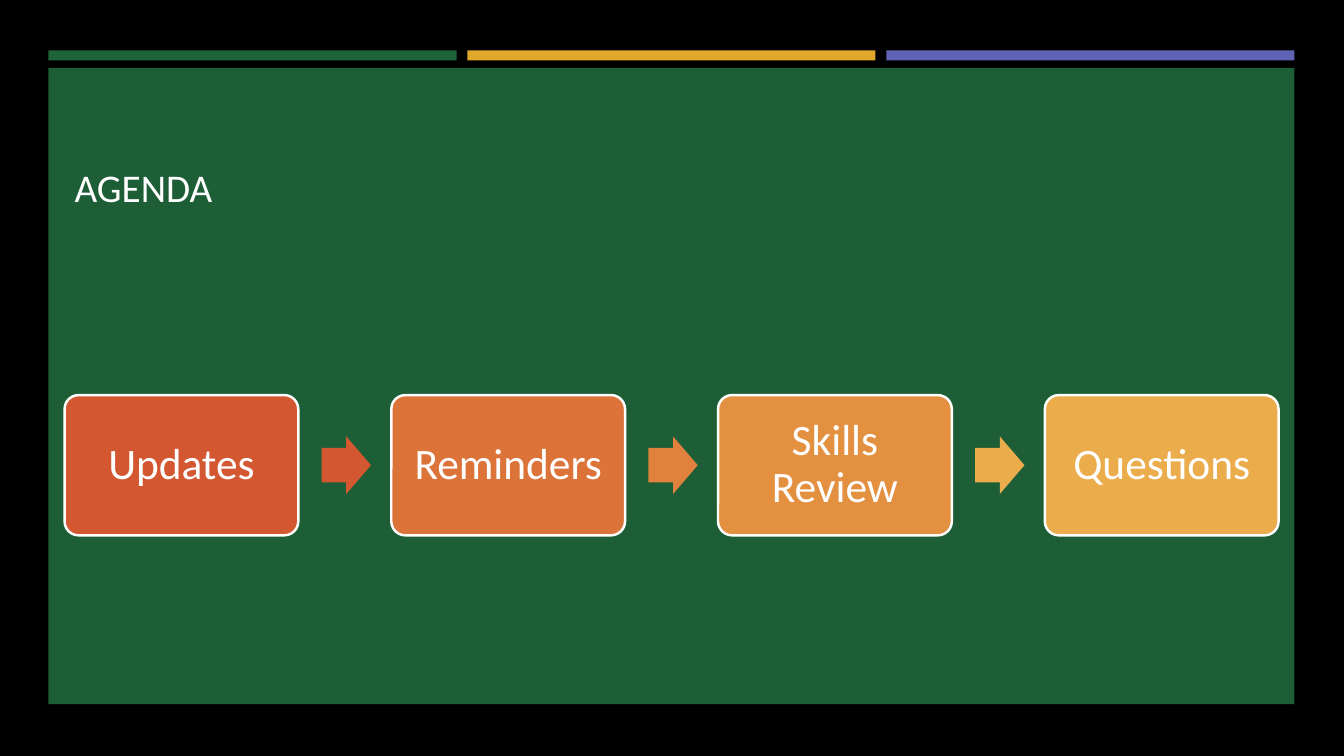
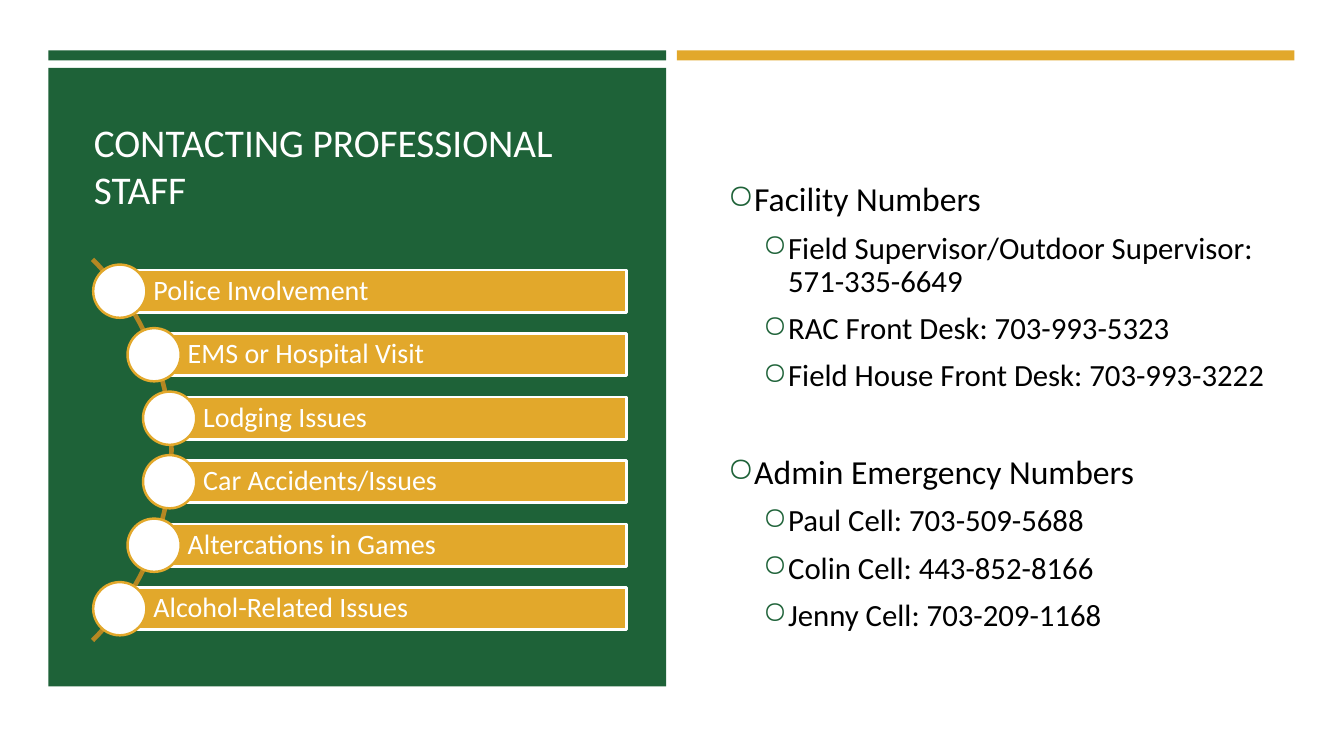
from dataclasses import dataclass
from math import cos, pi, sin, sqrt

from lxml.etree import SubElement
from pptx import Presentation
from pptx.dml.color import RGBColor as Rgb
from pptx.enum.shapes import MSO_SHAPE as Preset
from pptx.enum.text import MSO_ANCHOR as Anchor, MSO_AUTO_SIZE as AutoSize, PP_ALIGN as Align
from pptx.oxml.ns import qn
from pptx.util import Pt


@dataclass(frozen=True)
class Theme:
    font: str = "Calibri"
    black: str = "000000"
    white: str = "FFFFFF"
    green: str = "1E6238"
    gold: str = "E2A82B"
    violet: str = "6063B4"
    arc: str = "B58722"
    step_fills: tuple = ("D35731", "DC7339", "E49041", "EBAC4B")
    arrow_fills: tuple = ("D35731", "E0823D", "EBAC4B")
    title_size: float = 28
    step_size: float = 31
    bar_size: float = 20
    level_sizes: tuple = (24, 22)


THEME = Theme()

# Shared page frame, in points
SLIDE_WIDTH, SLIDE_HEIGHT = 960, 540
LEFT, CONTENT_WIDTH, BAND_GAP = 34.6, 890, 7.7
BAND_TOP, BAND_HEIGHT, PANEL_TOP = 36, 7.2, 48.5

AGENDA = ("Updates", "Reminders", "Skills Review", "Questions")
ISSUES = (
    "Police Involvement",
    "EMS or Hospital Visit",
    "Lodging Issues",
    "Car Accidents/Issues",
    "Altercations in Games",
    "Alcohol-Related Issues",
)
CONTACTS = (
    ("Facility Numbers", (
        "Field Supervisor/Outdoor Supervisor: 571-335-6649",
        "RAC Front Desk: 703-993-5323",
        "Field House Front Desk: 703-993-3222",
    )),
    ("Admin Emergency Numbers", (
        "Paul Cell: 703-509-5688",
        "Colin Cell: 443-852-8166",
        "Jenny Cell: 703-209-1168",
    )),
)


def format_runs(paragraph, size, color):
    for run in paragraph.runs:
        run.font.name = THEME.font
        run.font.size = Pt(size)
        run.font.color.rgb = Rgb.from_string(color)


def add_block(slide, preset, left, top, width, height, fill, line=None, line_width=1.75):
    """Add a flat preset shape with an optional outline."""
    shape = slide.shapes.add_shape(preset, Pt(left), Pt(top), Pt(width), Pt(height))
    shape.shadow.inherit = False
    shape.fill.solid()
    shape.fill.fore_color.rgb = Rgb.from_string(fill)
    if line:
        shape.line.color.rgb = Rgb.from_string(line)
        shape.line.width = Pt(line_width)
    else:
        shape.line.fill.background()
    return shape


def write_label(shape, text, size, align, margins):
    """Write one white label; margins are left, top, right, bottom."""
    frame = shape.text_frame
    frame.word_wrap = True
    frame.vertical_anchor = Anchor.MIDDLE
    (frame.margin_left, frame.margin_top,
     frame.margin_right, frame.margin_bottom) = map(Pt, margins)
    frame.text = text
    paragraph = frame.paragraphs[0]
    paragraph.alignment = align
    paragraph.line_spacing = 0.9
    format_runs(paragraph, size, THEME.white)


def add_page(presentation, background, band_colors):
    """Add a slide with its background and a row of equal bands."""
    slide = presentation.slides.add_slide(presentation.slide_layouts[5])
    slide.background.fill.solid()
    slide.background.fill.fore_color.rgb = Rgb.from_string(background)
    count = len(band_colors)
    width = (CONTENT_WIDTH - BAND_GAP * (count - 1)) / count
    for index, color in enumerate(band_colors):
        left = LEFT + index * (width + BAND_GAP)
        add_block(slide, Preset.RECTANGLE, left, BAND_TOP, width, BAND_HEIGHT, color)
    return slide


def add_panel(slide, width, height, opacity=100):
    panel = add_block(slide, Preset.RECTANGLE, LEFT, PANEL_TOP, width, height, THEME.green)
    if opacity < 100:
        color = next(panel.element.iter(qn("a:srgbClr")))
        SubElement(color, qn("a:alpha"), val=str(opacity * 1000))


def place_title(slide, text, left, top, width, height, anchor):
    title = slide.shapes.title
    title.left, title.top, title.width, title.height = map(Pt, (left, top, width, height))
    title.element.getparent().append(title.element)  # in front of the panel
    frame = title.text_frame
    frame.text = text
    frame.word_wrap = True
    frame.auto_size = AutoSize.NONE
    frame.vertical_anchor = anchor
    frame.paragraphs[0].alignment = Align.LEFT
    format_runs(frame.paragraphs[0], THEME.title_size, THEME.white)


def add_process(slide, steps):
    """Add a row of rounded steps with block arrows between them."""
    left, top, width, height, pitch = 46.1, 282.2, 167, 100.2, 233.4
    arrow_offset, arrow_width, arrow_height = 183.6, 35.3, 41.2
    for index, step in enumerate(steps):
        step_left = left + index * pitch
        box = add_block(slide, Preset.ROUNDED_RECTANGLE, step_left, top, width, height,
                        THEME.step_fills[index], THEME.white)
        box.adjustments[0] = 0.1
        write_label(box, step, THEME.step_size, Align.CENTER, (9.4,) * 4)
        if index < len(steps) - 1:
            arrow = add_block(slide, Preset.RIGHT_ARROW, step_left + arrow_offset,
                              top + (height - arrow_height) / 2, arrow_width, arrow_height,
                              THEME.arrow_fills[index])
            arrow.adjustments[0] = 0.6


def add_arc(slide, center_x, center_y, radius):
    """Draw the quarter circle that opens to the left."""
    segments = 48
    angles = [pi / 2 * index / segments - pi / 4 for index in range(segments + 1)]
    points = [(Pt(center_x + radius * cos(angle)), Pt(center_y + radius * sin(angle)))
              for angle in angles]
    builder = slide.shapes.build_freeform(*points[0])
    builder.add_line_segments(points[1:], close=False)
    arc = builder.convert_to_shape()
    arc.shadow.inherit = False
    arc.fill.background()
    arc.line.color.rgb = Rgb.from_string(THEME.arc)
    arc.line.width = Pt(3.3)


def add_curved_list(slide, items):
    """Add bars whose round markers sit on one arc."""
    center_x, center_y, radius = -70, 321.4, 192.5
    pitch, bar_height, bar_right, dot_size = 45.36, 30.2, 447.4, 38
    add_arc(slide, center_x, center_y, radius)
    for index, item in enumerate(items):
        offset = (index - (len(items) - 1) / 2) * pitch
        dot_x = center_x + sqrt(radius ** 2 - offset ** 2)
        dot_y = center_y + offset
        bar = add_block(slide, Preset.RECTANGLE, dot_x, dot_y - bar_height / 2,
                        bar_right - dot_x, bar_height, THEME.gold, THEME.white, 2)
        write_label(bar, item, THEME.bar_size, Align.LEFT, (24, 4.5, 4.5, 4.5))
        add_block(slide, Preset.OVAL, dot_x - dot_size / 2, dot_y - dot_size / 2,
                  dot_size, dot_size, THEME.white, THEME.gold)


def format_bullet(paragraph, level, space_before):
    """Set level, spacing, hanging indent and a coloured ring bullet."""
    paragraph.level = level
    paragraph.line_spacing = 0.9
    paragraph.space_before = Pt(space_before)
    paragraph.space_after = Pt(6)
    properties = paragraph._p.get_or_add_pPr()
    properties.set("marL", str(Pt((28, 53.3)[level])))
    properties.set("indent", str(Pt(-18)))
    color = SubElement(properties, qn("a:buClr"))
    SubElement(color, qn("a:srgbClr"), val=THEME.green)
    SubElement(properties, qn("a:buChar"), char="○")
    format_runs(paragraph, THEME.level_sizes[level], THEME.black)


def add_contacts(slide, groups):
    box = slide.shapes.add_textbox(Pt(502.6), Pt(115.2), Pt(434.2), Pt(352))
    frame = box.text_frame
    frame.word_wrap = True
    frame.vertical_anchor = Anchor.MIDDLE
    for group_index, (heading, numbers) in enumerate(groups):
        for line_index, text in enumerate((heading, *numbers)):
            first = group_index == line_index == 0
            paragraph = frame.paragraphs[0] if first else frame.add_paragraph()
            paragraph.text = text
            starts_group = group_index > 0 and line_index == 0
            format_bullet(paragraph, min(line_index, 1), 38 if starts_group else 4)


def build_agenda(presentation):
    slide = add_page(presentation, THEME.black, (THEME.green, THEME.gold, THEME.violet))
    add_panel(slide, CONTENT_WIDTH, 454.5, opacity=97)
    place_title(slide, "AGENDA", 46.1, 79.2, 867.6, 108, Anchor.MIDDLE)
    add_process(slide, AGENDA)


def build_contacts(presentation):
    slide = add_page(presentation, THEME.white, (THEME.green, THEME.gold))
    add_panel(slide, (CONTENT_WIDTH - BAND_GAP) / 2, 441.8)
    place_title(slide, "CONTACTING PROFESSIONAL STAFF", 59.8, 75.6, 391, 79.9, Anchor.BOTTOM)
    add_contacts(slide, CONTACTS)
    add_curved_list(slide, ISSUES)


def main():
    presentation = Presentation()
    presentation.slide_width = Pt(SLIDE_WIDTH)
    presentation.slide_height = Pt(SLIDE_HEIGHT)
    build_agenda(presentation)
    build_contacts(presentation)
    presentation.save("out.pptx")


if __name__ == "__main__":
    main()
